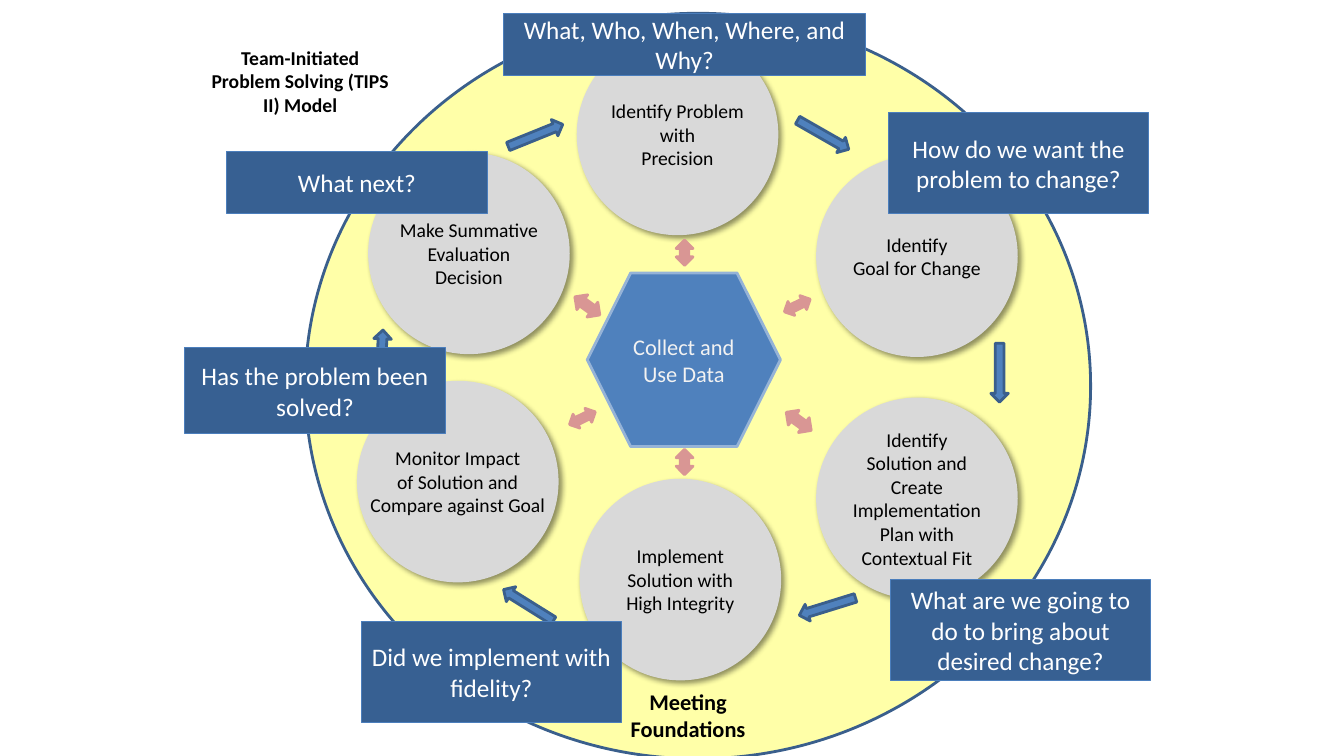
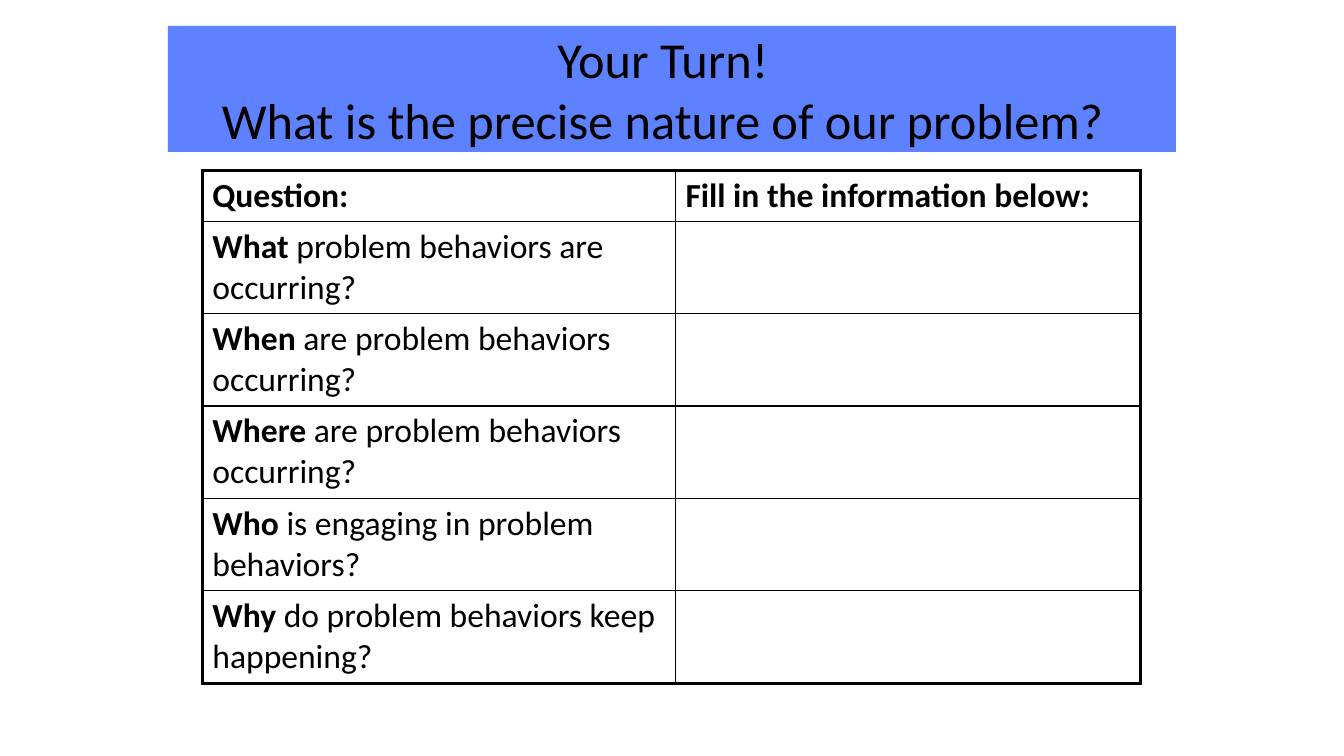
from dataclasses import dataclass

from lxml import etree
from pptx import Presentation
from pptx.dml.color import RGBColor
from pptx.enum.shapes import MSO_SHAPE
from pptx.enum.text import MSO_ANCHOR, PP_ALIGN
from pptx.oxml.ns import qn
from pptx.util import Pt

RECTANGLE = MSO_SHAPE.RECTANGLE
OVAL = MSO_SHAPE.OVAL
HEXAGON = MSO_SHAPE.HEXAGON
RIGHT_ARROW = MSO_SHAPE.RIGHT_ARROW
DOUBLE_ARROW = MSO_SHAPE.UP_DOWN_ARROW
MIDDLE = MSO_ANCHOR.MIDDLE
TOP = MSO_ANCHOR.TOP
CENTER = PP_ALIGN.CENTER


@dataclass(frozen=True)
class Theme:
    font: str = "Calibri"
    black: str = "000000"
    white: str = "FFFFFF"
    pale_text: str = "F2F2F2"
    ring: str = "FFFF00"
    outline: str = "3A5F8C"
    step: str = "D9D9D9"
    blue: str = "4F81BD"
    hub_line: str = "95B3D7"
    link: str = "D99694"
    callout: str = "376092"
    callout_line: str = "4B7EBC"
    title_band: str = "5D81FF"
    label_size: int = 14
    hub_size: int = 16
    callout_size: int = 18
    table_size: int = 24
    title_size: int = 36
    thin: float = 1
    thick: float = 2.25


class Deck:
    def __init__(self, theme):
        self.theme = theme
        self.presentation = Presentation()
        self.presentation.slide_width = Pt(960)
        self.presentation.slide_height = Pt(540)
        self.slide = None

    def new_slide(self):
        layout = self.presentation.slide_layouts[6]
        self.slide = self.presentation.slides.add_slide(layout)

    def style_run(self, run, size, color, bold=False):
        run.font.name = self.theme.font
        run.font.size = Pt(size)
        run.font.bold = bold
        run.font.color.rgb = RGBColor.from_string(color)

    def set_text(self, shape, text, size, color, bold=False, wrap=True, anchor=MIDDLE):
        frame = shape.text_frame
        frame.text = text
        frame.word_wrap = wrap
        frame.vertical_anchor = anchor
        for paragraph in frame.paragraphs:
            paragraph.alignment = CENTER
            for run in paragraph.runs:
                self.style_run(run, size, color, bold)

    def shape(self, kind, box, fill, line=None, line_width=2, rotation=0):
        shape = self.slide.shapes.add_shape(kind, *map(Pt, box))
        shape.shadow.inherit = False
        shape.rotation = rotation
        shape.fill.solid()
        shape.fill.fore_color.rgb = RGBColor.from_string(fill)
        if line:
            shape.line.color.rgb = RGBColor.from_string(line)
            shape.line.width = Pt(line_width)
        else:
            shape.line.fill.background()
        return shape

    def label(self, box, text, size, **options):
        textbox = self.slide.shapes.add_textbox(*map(Pt, box))
        self.set_text(textbox, text, size, self.theme.black, bold=True, **options)

    def ring(self, box):
        ring = self.shape(OVAL, box, self.theme.ring, self.theme.outline)
        color = ring.element.spPr.find(qn("a:solidFill"))[0]
        etree.SubElement(color, qn("a:alpha"), val="34000")

    def step(self, left, top, text):
        circle = self.shape(OVAL, (left, top, 144, 144), self.theme.step)
        effects = circle.element.spPr.find(qn("a:effectLst"))
        shadow = etree.SubElement(
            effects, qn("a:outerShdw"), blurRad=str(Pt(4)), dist=str(Pt(3)),
            dir="2700000", algn="tl", rotWithShape="0")
        color = etree.SubElement(shadow, qn("a:srgbClr"), val=self.theme.black)
        etree.SubElement(color, qn("a:alpha"), val="43000")
        self.set_text(circle, text, self.theme.label_size, self.theme.black, wrap=False)

    def hub(self, box, text):
        hub = self.shape(HEXAGON, box, self.theme.blue, self.theme.hub_line)
        self.set_text(hub, text, self.theme.hub_size, self.theme.pale_text)

    def cycle_arrow(self, left, top, rotation):
        self.shape(RIGHT_ARROW, (left, top, 42, 12.5), self.theme.blue,
                   self.theme.outline, rotation=rotation)

    def link_arrow(self, box, rotation):
        self.shape(DOUBLE_ARROW, box, self.theme.link, self.theme.link,
                   rotation=rotation)

    def callout(self, box, text):
        callout = self.shape(RECTANGLE, box, self.theme.callout,
                             self.theme.callout_line, 0.75)
        self.set_text(callout, text, self.theme.callout_size, self.theme.white)

    def title(self, box, text):
        band = self.shape(RECTANGLE, box, self.theme.title_band)
        band.text_frame.margin_right = Pt(20)
        self.set_text(band, text, self.theme.title_size, self.theme.black)

    def border(self, cell, side, width):
        properties = cell._tc.get_or_add_tcPr()
        line = etree.SubElement(properties, qn(f"a:ln{side}"), w=str(Pt(width)))
        fill = etree.SubElement(line, qn("a:solidFill"))
        etree.SubElement(fill, qn("a:srgbClr"), val=self.theme.black)

    def table(self, left, top, widths, heights, rows):
        frame = self.slide.shapes.add_table(
            len(rows), len(widths), Pt(left), Pt(top),
            Pt(sum(widths)), Pt(sum(heights)))
        table = frame.table
        table.first_row = False
        table.horz_banding = False
        for column, width in zip(table.columns, widths):
            column.width = Pt(width)
        for row, height in zip(table.rows, heights):
            row.height = Pt(height)
        last_row, last_column = len(rows) - 1, len(widths) - 1
        for i, row in enumerate(rows):
            for j, (strong, plain) in enumerate(row):
                cell = table.cell(i, j)
                outer_sides = {"L": j == 0, "R": j == last_column,
                               "T": i == 0, "B": i == last_row}
                for side, outer in outer_sides.items():
                    self.border(cell, side, self.theme.thick if outer else self.theme.thin)
                cell.fill.background()
                paragraph = cell.text_frame.paragraphs[0]
                for text, bold in ((strong, True), (plain, False)):
                    if text:
                        run = paragraph.add_run()
                        run.text = text
                        self.style_run(run, self.theme.table_size, self.theme.black, bold)


STEPS = [
    (414, 342, "Implement\nSolution with\nHigh Integrity"),
    (583, 111, "Identify\nGoal for Change"),
    (412, 24, "Identify Problem\nwith\nPrecision"),
    (255, 272, "Monitor Impact\nof Solution and\nCompare against Goal"),
    (263, 109, "Make Summative\nEvaluation\nDecision"),
    (583, 284, "Identify\nSolution and\nCreate\nImplementation\nPlan with\nContextual Fit"),
]
CYCLE_ARROWS = [
    (567, 90, 29.7), (693, 260, 90), (570, 427, 162.8),
    (356.5, 426, 212), (251.5, 250.5, 272.9), (361.5, 90.5, 338),
]
LINK_ARROWS = [
    ((483, 171.5, 12, 18), 0), ((483, 321, 12, 18), 0),
    ((564, 208, 11, 20.5), 63.9), ((410.5, 288.5, 11, 20.5), 63.9),
    ((564, 290, 13, 22), 126), ((413, 207.5, 13, 22), 126),
]
CALLOUTS = [
    ((360, 9.5, 258, 44.5), "What, Who, When, Where, and Why?"),
    ((634.5, 80.5, 186, 72), "How do we want the problem to change?"),
    ((636, 414, 186, 72), "What are we going to do to bring about desired change?"),
    ((258, 444, 186, 72), "Did we implement with fidelity?"),
    ((132, 248.5, 186, 61.5), "Has the problem been solved?"),
    ((162, 108.5, 186, 44), "What next?"),
]
QUESTIONS = [
    ("What", " problem behaviors are occurring?"),
    ("When", " are problem behaviors occurring?"),
    ("Where", " are problem behaviors occurring?"),
    ("Who", " is engaging in problem behaviors?"),
    ("Why", " do problem behaviors keep happening?"),
]


def build_model(deck):
    deck.new_slide()
    deck.ring((218, 9.5, 561, 532.5))
    for step in STEPS:
        deck.step(*step)
    deck.label((412, 492.5, 159, 36), "Meeting\nFoundations",
               deck.theme.hub_size, wrap=False)
    deck.label((141, 29, 147, 58), "Team-Initiated Problem Solving (TIPS II) Model",
               deck.theme.label_size, anchor=TOP)
    deck.hub((419.5, 195, 138, 124), "Collect and Use Data")
    for arrow in CYCLE_ARROWS:
        deck.cycle_arrow(*arrow)
    for arrow in LINK_ARROWS:
        deck.link_arrow(*arrow)
    for callout in CALLOUTS:
        deck.callout(*callout)


def build_exercise(deck):
    deck.new_slide()
    deck.title((120, 18.5, 720, 90),
               "Your Turn!\nWhat is the precise nature of our problem?")
    header = [("Question:", ""), ("Fill in the information below:", "")]
    rows = [header] + [[question, ("", "")] for question in QUESTIONS]
    deck.table(144.5, 122, [338, 332], [36] + [66] * len(QUESTIONS), rows)


def main():
    deck = Deck(Theme())
    build_model(deck)
    build_exercise(deck)
    deck.presentation.save("out.pptx")


if __name__ == "__main__":
    main()
